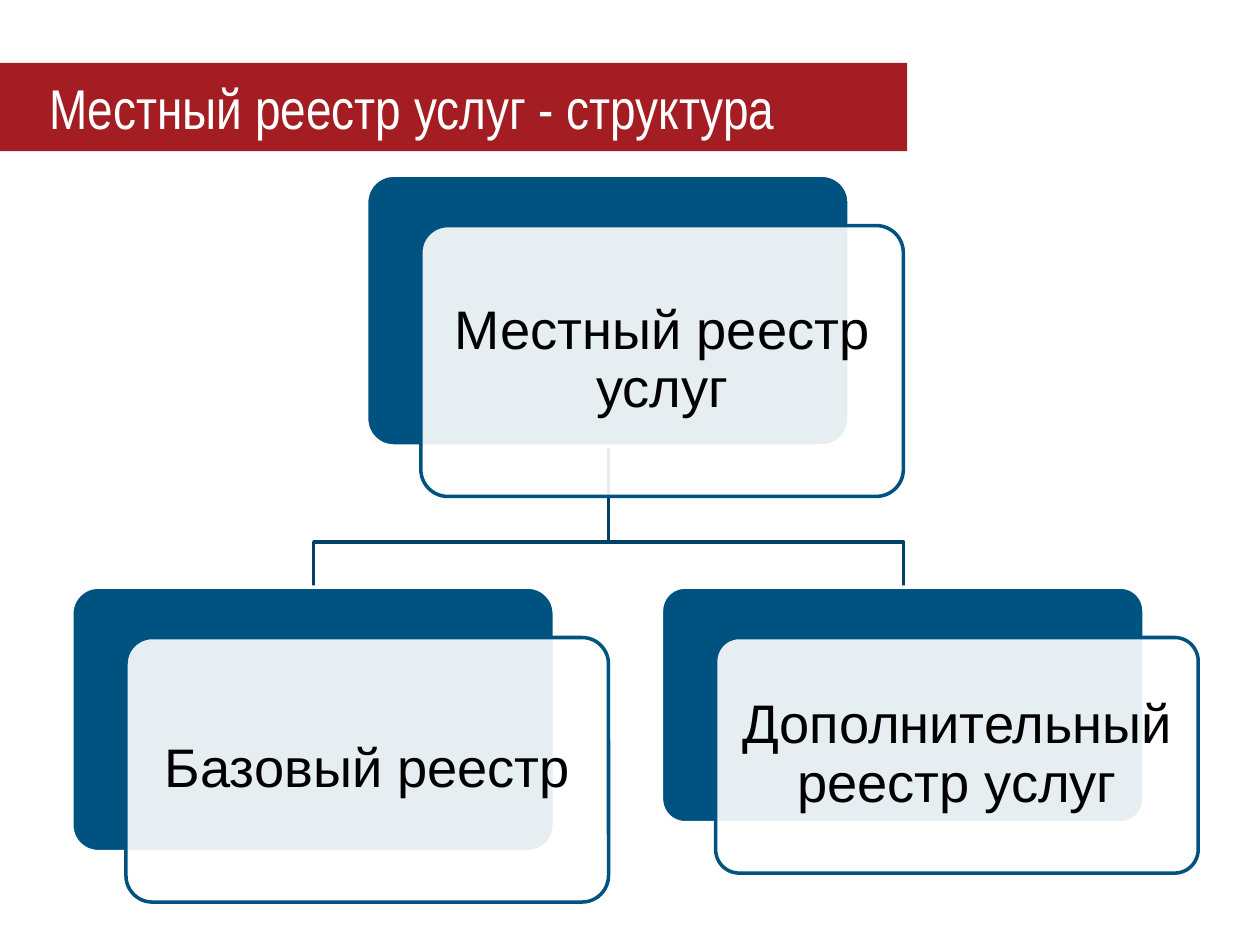
from lxml import etree
from pptx import Presentation
from pptx.dml.color import RGBColor
from pptx.enum import shapes, text
from pptx.oxml.ns import qn
from pptx.util import Inches, Pt

BLUE, WHITE = "005380", "FFFFFF"


def rgb(value):
    return RGBColor.from_string(value)


def style(sp, fill, line):
    """Set fill and outline; None leaves that part empty."""
    sp.shadow.inherit = False
    if fill:
        sp.fill.solid()
        sp.fill.fore_color.rgb = rgb(fill)
    else:
        sp.fill.background()
    if line:
        sp.line.color.rgb = rgb(line)
        sp.line.width = Pt(2)
    else:
        sp.line.fill.background()


prs = Presentation()
prs.slide_width, prs.slide_height = Inches(10), Inches(7.5)
s = prs.slides.add_slide(prs.slide_layouts[6])

# Title band
sp = s.shapes.add_shape(shapes.MSO_SHAPE.RECTANGLE, 0, Inches(0.5), Inches(7.2), Inches(0.7))
style(sp, "A31D23", None)
tf = sp.text_frame
tf.word_wrap = True
tf.margin_left = tf.margin_right = Inches(0.39)
tf.vertical_anchor = text.MSO_ANCHOR.MIDDLE
p = tf.paragraphs[0]
p.text = "Местный реестр услуг - структура"
p.alignment = text.PP_ALIGN.LEFT
p.font.name, p.font.size, p.font.color.rgb = "Arial Narrow", Pt(32), rgb(WHITE)

# Branches from the parent card down to each child
parent_x, parent_y, bend_y, child_y = 4.83, 3.54, 4.3, 4.66
for child_x in (7.17, 2.49):
    fb = s.shapes.build_freeform(Inches(parent_x), Inches(parent_y))
    fb.add_line_segments([(Inches(x), Inches(y)) for x, y in
                          ((parent_x, bend_y), (child_x, bend_y), (child_x, child_y))],
                         close=False)
    style(fb.convert_to_shape(), None, "004267")

# Cards: a solid back plate, a translucent front plate, and a label
card_w, shift, inset = 3.83, 0.4, 0.06
cards = [
    (2.91, 1.39, 2.15, "Местный реестр услуг"),
    (0.57, 4.66, 2.1, "Базовый реестр"),
    (5.25, 4.66, 1.87, "Дополнительный реестр услуг"),
]
for x, y, h, label in cards:
    front_x, front_y = x + 0.43, y + shift
    for left, top, fill, line in ((x, y, BLUE, WHITE), (front_x, front_y, WHITE, BLUE)):
        sp = s.shapes.add_shape(shapes.MSO_SHAPE.ROUNDED_RECTANGLE, Inches(left), Inches(top),
                                Inches(card_w), Inches(h))
        sp.adjustments[0] = 0.1
        style(sp, fill, line)
    color = sp.fill._xPr.find(qn("a:solidFill"))[0]
    etree.SubElement(color, qn("a:alpha"), val="90000")

    tb = s.shapes.add_textbox(Inches(front_x + inset), Inches(front_y + inset),
                              Inches(card_w - 2 * inset), Inches(h - 2 * inset))
    tf = tb.text_frame
    tf.word_wrap = True
    tf.vertical_anchor = text.MSO_ANCHOR.MIDDLE
    tf.margin_left = tf.margin_right = tf.margin_top = tf.margin_bottom = Inches(0.13)
    p = tf.paragraphs[0]
    p.text = label
    p.alignment = text.PP_ALIGN.CENTER
    p.line_spacing = 0.9
    p.font.name, p.font.size, p.font.color.rgb = "Arial", Pt(31), rgb("000000")

prs.save("out.pptx")
